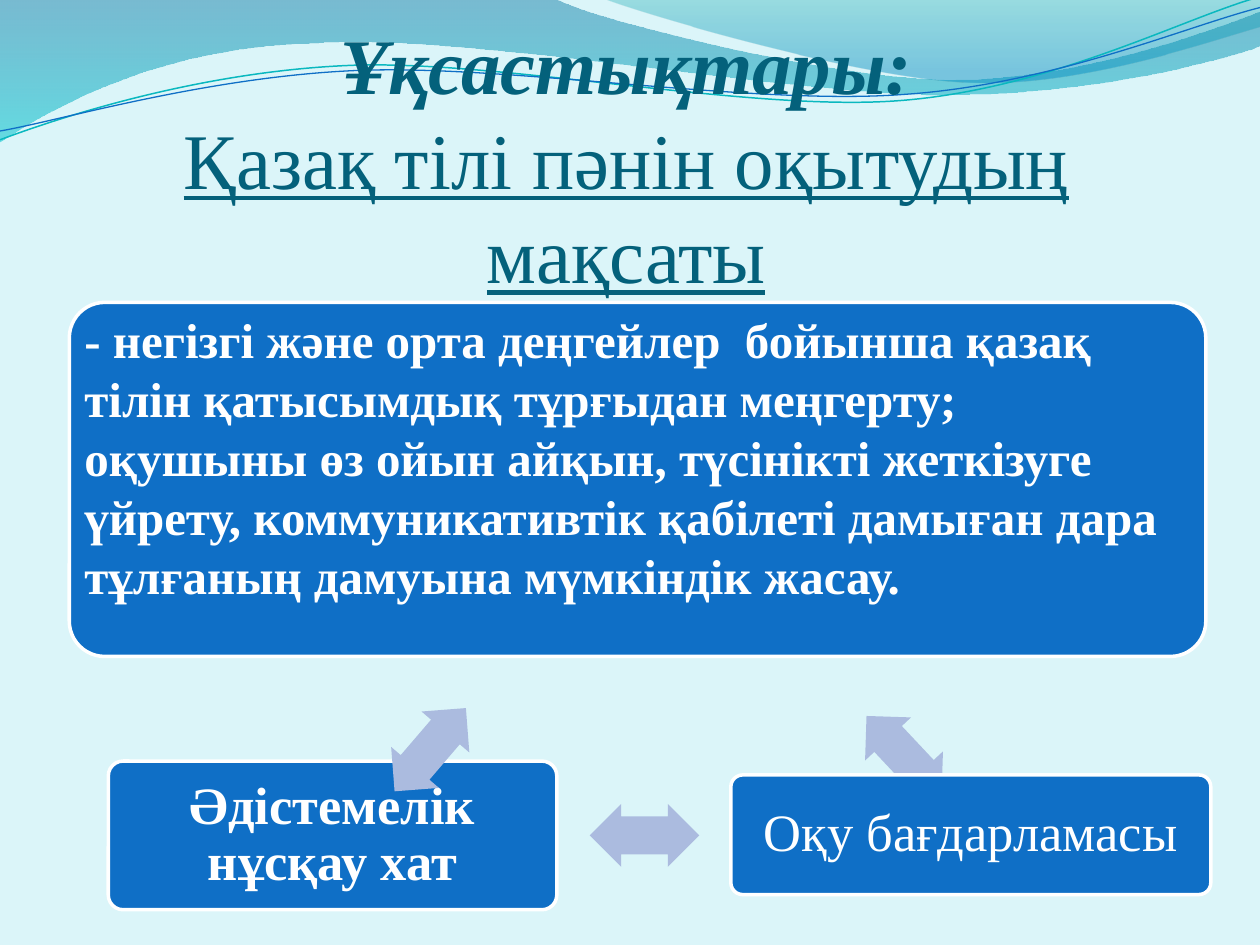
import pptx
import pptx.dml.color
import pptx.enum.shapes
import pptx.enum.text
import pptx.util
from pptx.util import Inches
from lxml import etree

SERIF = "Times New Roman"
BLUE, PALE_BLUE, WHITE = "0F6FC6", "ABBBDF", "FFFFFF"
A = "{http://schemas.openxmlformats.org/drawingml/2006/main}"
SHAPES = pptx.enum.shapes.MSO_SHAPE
ANCHOR = pptx.enum.text.MSO_ANCHOR
ALIGN = pptx.enum.text.PP_ALIGN


def color(value):
    return pptx.dml.color.RGBColor.from_string(value)


class SlideBuilder:
    def __init__(self, slide, font):
        self.slide = slide
        self.font = font

    def background(self, fill):
        self.slide.background.fill.solid()
        self.slide.background.fill.fore_color.rgb = color(fill)

    def outline(self, start, segments, close):
        """Segments are lines (x, y) or cubic curves (x1, y1, x2, y2, x, y)."""
        points = [(Inches(x), Inches(y)) for segment in segments
                  for x, y in zip(segment[::2], segment[1::2])]
        builder = self.slide.shapes.build_freeform(*map(Inches, start))
        builder.add_line_segments(points, close=close)
        shape = builder.convert_to_shape()
        shape.shadow.inherit = False
        # Join the three points of each curve into one cubic segment
        vertices = iter(list(shape._element.iter(A + "lnTo")))
        for segment in segments:
            group = [next(vertices) for _ in segment[::2]]
            if len(group) == 3:
                curve = etree.Element(A + "cubicBezTo")
                group[0].addprevious(curve)
                for vertex in group:
                    curve.append(vertex[0])
                    vertex.getparent().remove(vertex)
        return shape

    def wave(self, start, segments, stops):
        """Filled wave; stops are (position, colour, opacity), in percent."""
        shape = self.outline(start, segments, close=True)
        shape.line.fill.background()
        shape.fill.gradient()
        gradient = shape.fill._fill._gradFill
        for child in list(gradient):
            gradient.remove(child)
        stop_list = etree.SubElement(gradient, A + "gsLst")
        for position, value, opacity in stops:
            stop = etree.SubElement(stop_list, A + "gs", pos=str(position * 1000))
            rgb = etree.SubElement(stop, A + "srgbClr", val=value)
            etree.SubElement(rgb, A + "alpha", val=str(opacity * 1000))
        etree.SubElement(gradient, A + "lin", ang="5400000", scaled="0")

    def wave_line(self, start, segments, line, width):
        shape = self.outline(start, segments, close=False)
        shape.fill.background()
        shape.line.color.rgb = color(line)
        shape.line.width = pptx.util.Pt(width)

    def title(self, box, heading, subject):
        title = self.slide.shapes.title
        title._element.getparent().append(title._element)  # in front of the waves
        title.left, title.top, title.width, title.height = map(Inches, box)
        frame = title.text_frame
        frame.word_wrap = True
        frame.auto_size = pptx.enum.text.MSO_AUTO_SIZE.NONE
        frame.vertical_anchor = ANCHOR.BOTTOM
        frame.margin_left = frame.margin_right = 0
        frame.margin_bottom = Inches(0.74)
        paragraph = frame.paragraphs[0]
        paragraph.alignment = ALIGN.CENTER
        paragraph.line_spacing = 1.0
        paragraph.font.name = self.font
        paragraph.font.size = pptx.util.Pt(45)
        paragraph.font.color.rgb = color("04617B")
        heading_run = paragraph.add_run()
        heading_run.text = heading
        heading_run.font.bold = heading_run.font.italic = True
        paragraph.add_line_break()
        subject_run = paragraph.add_run()
        subject_run.text = subject
        subject_run.font.underline = True

    def card(self, box, text, size, bold=False, align=ALIGN.CENTER,
             anchor=ANCHOR.MIDDLE, spacing=0.9, inset=0.12):
        panel = self.slide.shapes.add_shape(SHAPES.ROUNDED_RECTANGLE, *map(Inches, box))
        panel.shadow.inherit = False
        panel.adjustments[0] = 0.1
        panel.fill.solid()
        panel.fill.fore_color.rgb = color(BLUE)
        panel.line.color.rgb = color(WHITE)
        panel.line.width = pptx.util.Pt(2)
        # The text spans the whole card, past the rounded corners' own inset
        frame = self.slide.shapes.add_textbox(*map(Inches, box)).text_frame
        frame.word_wrap = True
        frame.vertical_anchor = anchor
        frame.margin_left = frame.margin_right = Inches(0.12)
        frame.margin_top = frame.margin_bottom = Inches(inset)
        paragraph = frame.paragraphs[0]
        paragraph.text = text
        paragraph.alignment = align
        paragraph.line_spacing = spacing
        paragraph.font.name = self.font
        paragraph.font.size = pptx.util.Pt(size)
        paragraph.font.bold = bold
        paragraph.font.color.rgb = color(WHITE)

    def double_arrow(self, left, top, rotation):
        shape = self.slide.shapes.add_shape(
            SHAPES.LEFT_RIGHT_ARROW, Inches(left), Inches(top), Inches(0.87), Inches(0.5))
        shape.shadow.inherit = False
        shape.adjustments[0] = 0.6
        shape.adjustments[1] = 0.5
        shape.rotation = rotation
        shape.fill.solid()
        shape.fill.fore_color.rgb = color(PALE_BLUE)
        shape.line.fill.background()


def main():
    presentation = pptx.Presentation()
    presentation.slide_width, presentation.slide_height = Inches(10), Inches(7.5)
    slide = presentation.slides.add_slide(presentation.slide_layouts[5])
    builder = SlideBuilder(slide, SERIF)
    builder.background("DBF5F9")

    # Waves along the top edge
    builder.wave((0, 0), [(4.4, -0.01),
                          (4.76, 0.17, 6.64, 0.63, 7.58, 0.63),
                          (8.53, 0.63, 9.58, 0.26, 10, 0.09),
                          (10.01, 0.36),
                          (9.83, 0.44, 8.7, 0.76, 7.46, 0.75),
                          (6.22, 0.75, 3.82, 0.28, 2.57, 0.34),
                          (1.29, 0.36, 0.46, 0.83, -0.01, 1.13)],
                 [(0, "0074A1", 45), (100, "00C6CF", 55)])
    builder.wave((4.79, -0.01), [(5.09, 0.11, 6.82, 0.62, 7.69, 0.65),
                                 (8.56, 0.69, 9.61, 0.32, 10, 0.21),
                                 (10, 0)],
                 [(0, "00A1A9", 30), (80, "008BBF", 45)])
    builder.wave_line((0, 1.11), [(0.48, 0.93, 1.58, 0.57, 2.77, 0.52),
                                  (3.95, 0.47, 5.93, 0.89, 7.13, 0.8),
                                  (8.33, 0.71, 9.38, 0.15, 9.98, -0.02)], "0AB8BF", 0.85)
    builder.wave_line((0, 1.04), [(0.47, 0.96, 1.64, 0.61, 2.83, 0.56),
                                  (4.03, 0.51, 5.97, 0.84, 7.17, 0.75),
                                  (8.36, 0.67, 9.41, 0.21, 10, 0.06)], BLUE, 0.75)

    # Title
    builder.title((0.47, 1.56, 9, 1.56), "Ұқсастықтары:", "Қазақ тілі пәнін оқытудың мақсаты")

    # Goal and the two documents, joined in a cycle
    builder.card((0.55, 2.4, 9.02, 2.81),
                 "- негізгі және орта деңгейлер  бойынша қазақ тілін қатысымдық тұрғыдан "
                 "меңгерту; оқушыны өз ойын айқын, түсінікті жеткізуге үйрету, "
                 "коммуникативтік қабілеті дамыған дара тұлғаның дамуына мүмкіндік жасау.",
                 28, bold=True, align=ALIGN.LEFT, anchor=ANCHOR.TOP, spacing=1.0, inset=0.06)
    builder.double_arrow(6.74, 5.75, 46.8)
    builder.card((5.8, 6.15, 3.81, 0.95), "Оқу бағдарламасы", 30)
    builder.double_arrow(4.68, 6.38, 180)
    builder.card((0.86, 6.04, 3.56, 1.18), "Әдістемелік нұсқау хат", 30, bold=True)
    builder.double_arrow(2.98, 5.7, 310.6)

    presentation.save("out.pptx")


if __name__ == "__main__":
    main()
